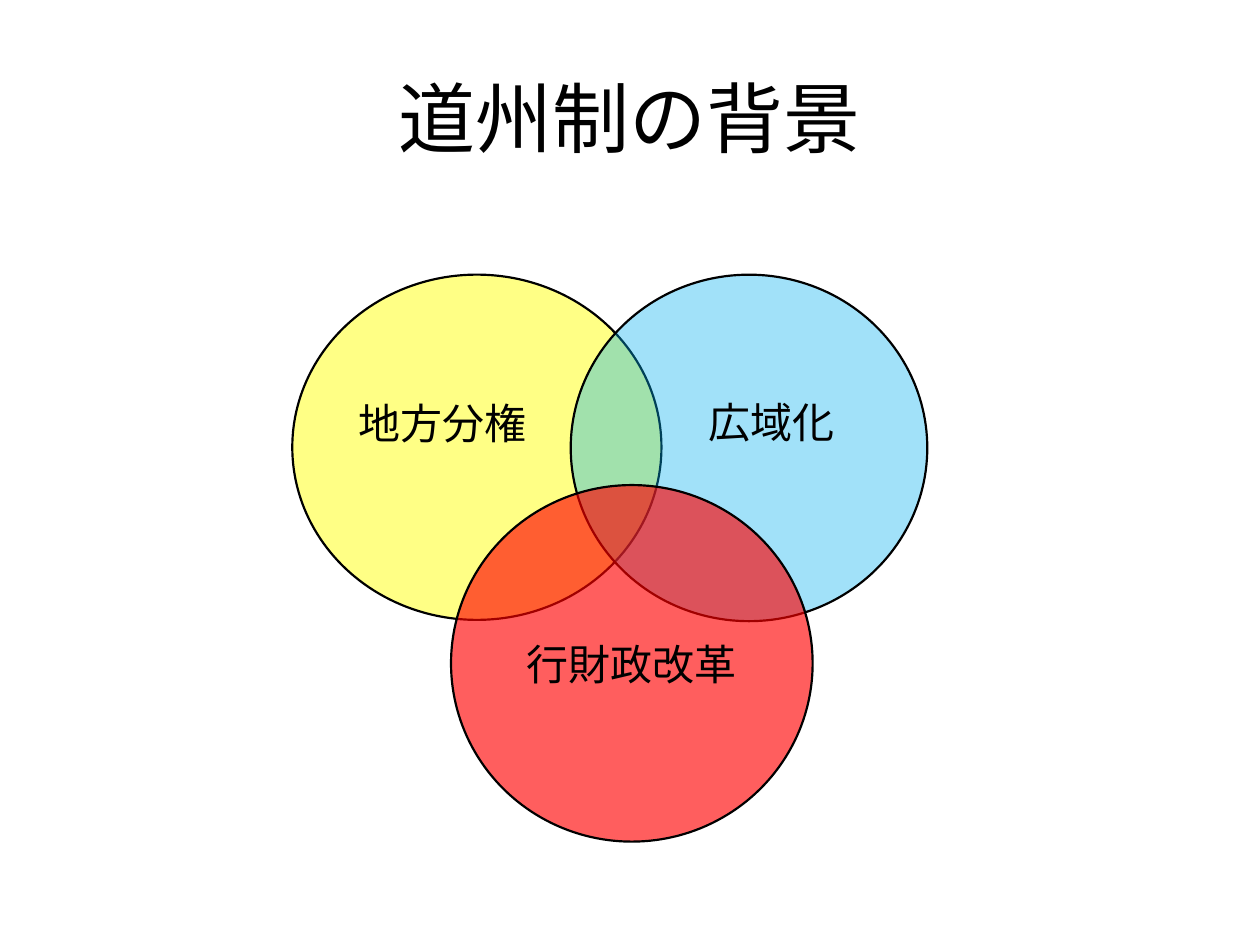
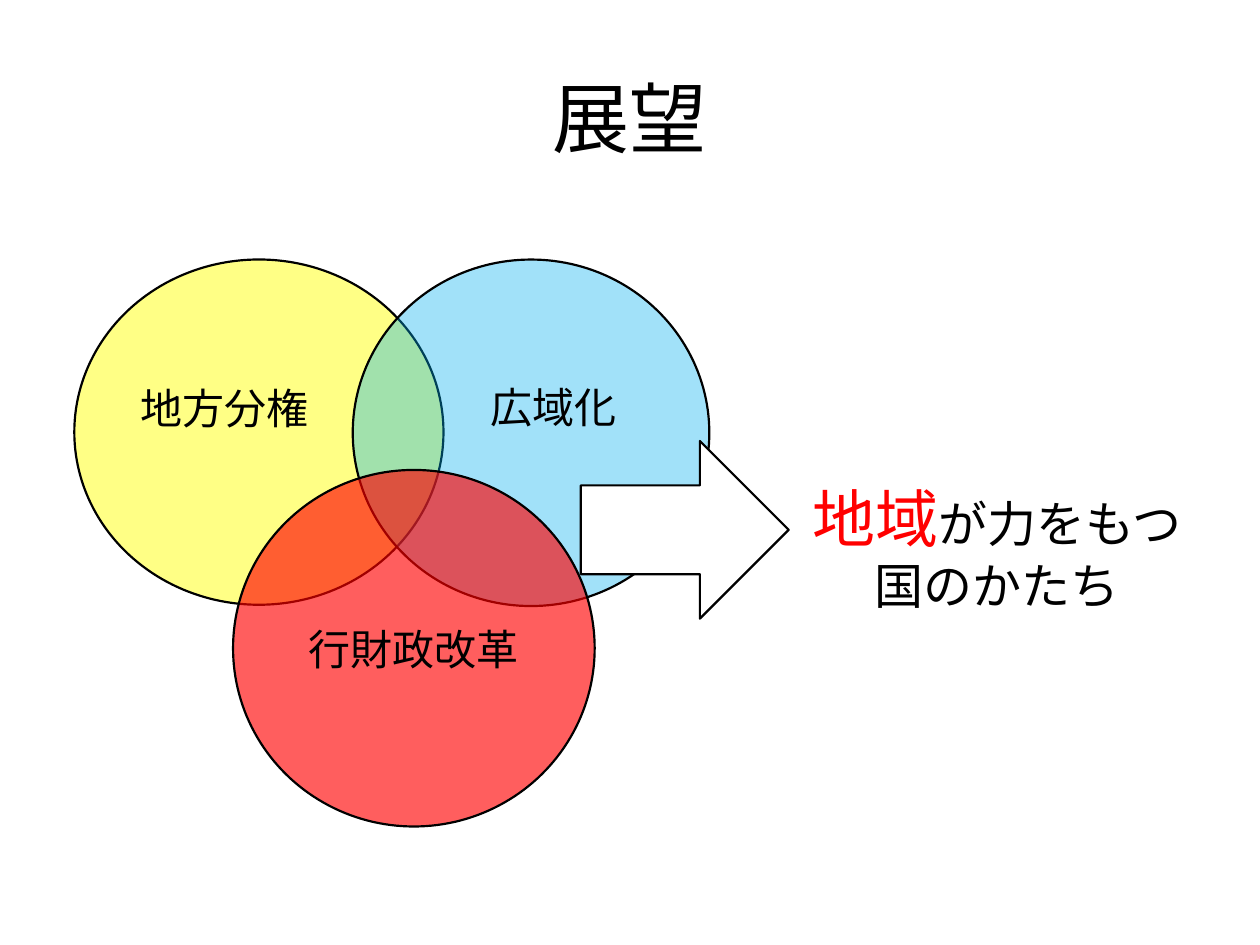
from lxml import etree
from pptx import Presentation
from pptx.dml.color import RGBColor
from pptx.enum import lang, shapes, text
from pptx.oxml import ns
from pptx.util import Inches, Pt

BLACK = RGBColor(0x00, 0x00, 0x00)
WHITE = RGBColor(0xFF, 0xFF, 0xFF)
YELLOW = RGBColor(0xFF, 0xFF, 0x00)
BLUE = RGBColor(0x00, 0xB0, 0xF0)
RED = RGBColor(0xFF, 0x00, 0x00)
LATIN_FONT = "Calibri"
JAPANESE_FONT = "Noto Sans CJK JP"

LEFT, CENTER = text.PP_ALIGN.LEFT, text.PP_ALIGN.CENTER

# Circles of the diagram: label, offset and size, colour, opacity in percent,
# alignment, left and bottom insets that place the label
CIRCLES = [
    ("地方分権", (0, 0, 2.93, 2.74), YELLOW, 48, LEFT, 0.1, 0.44),
    ("広域化", (2.21, 0, 2.83, 2.75), BLUE, 37, CENTER, 0.46, 0.46),
    ("行財政改革", (1.26, 1.67, 2.87, 2.83), RED, 63, CENTER, 0.1, 0.05),
]
# Slide title, left and top of its diagram
SLIDES = [("道州制の背景", 2.32, 2.18), ("展望", 0.59, 2.06)]


def add_run(paragraph, words, size, color=BLACK, latin=JAPANESE_FONT):
    run = paragraph.add_run()
    run.text = words
    run.font.size = Pt(size)
    run.font.name = latin
    run.font.color.rgb = color
    run.font.language_id = lang.MSO_LANGUAGE_ID.JAPANESE
    etree.SubElement(run._r.get_or_add_rPr(), ns.qn("a:ea"), typeface=JAPANESE_FONT)


def add_outlined(parent, kind, left, top, width, height, color):
    shape = parent.add_shape(kind, Inches(left), Inches(top), Inches(width), Inches(height))
    shape.shadow.inherit = False
    shape.fill.solid()
    shape.fill.fore_color.rgb = color
    shape.line.color.rgb = BLACK
    shape.line.width = Pt(1.25)
    return shape


presentation = Presentation()
presentation.slide_width = Inches(10)
presentation.slide_height = Inches(7.5)

for title_words, diagram_left, diagram_top in SLIDES:
    slide = presentation.slides.add_slide(presentation.slide_layouts[5])

    # Title
    title = slide.shapes.title
    title.left, title.top = Inches(0.5), Inches(0.3)
    title.width, title.height = Inches(9), Inches(1.25)
    title.text_frame.vertical_anchor = text.MSO_ANCHOR.MIDDLE
    paragraph = title.text_frame.paragraphs[0]
    paragraph.alignment = CENTER
    add_run(paragraph, title_words, 44)

    # Three overlapping circles
    diagram = slide.shapes.add_group_shape()
    for label, (x, y, width, height), color, opacity, alignment, left_inset, bottom_inset in CIRCLES:
        circle = add_outlined(diagram.shapes, shapes.MSO_SHAPE.OVAL,
                              diagram_left + x, diagram_top + y, width, height, color)
        color_element = circle.fill._xPr.find(".//" + ns.qn("a:srgbClr"))
        etree.SubElement(color_element, ns.qn("a:alpha"), val=str(opacity * 1000))
        frame = circle.text_frame
        frame.word_wrap = True
        frame.vertical_anchor = text.MSO_ANCHOR.MIDDLE
        frame.margin_left = Inches(left_inset)
        frame.margin_bottom = Inches(bottom_inset)
        paragraph = frame.paragraphs[0]
        paragraph.alignment = alignment
        add_run(paragraph, label, 24, latin=LATIN_FONT)

# Arrow to the conclusion, on the last slide
add_outlined(slide.shapes, shapes.MSO_SHAPE.RIGHT_ARROW, 4.61, 3.5, 1.65, 1.41, WHITE)

# Conclusion
conclusion = slide.shapes.add_textbox(Inches(6.26), Inches(3.76), Inches(3.31), Inches(1.18))
frame = conclusion.text_frame
frame.word_wrap = True
frame.auto_size = text.MSO_AUTO_SIZE.SHAPE_TO_FIT_TEXT
first_line, second_line = frame.paragraphs[0], frame.add_paragraph()
first_line.alignment = second_line.alignment = CENTER
add_run(first_line, "地域", 36, RED)
add_run(first_line, "が力をもつ", 28)
add_run(second_line, "国のかたち", 28)

presentation.save("out.pptx")
